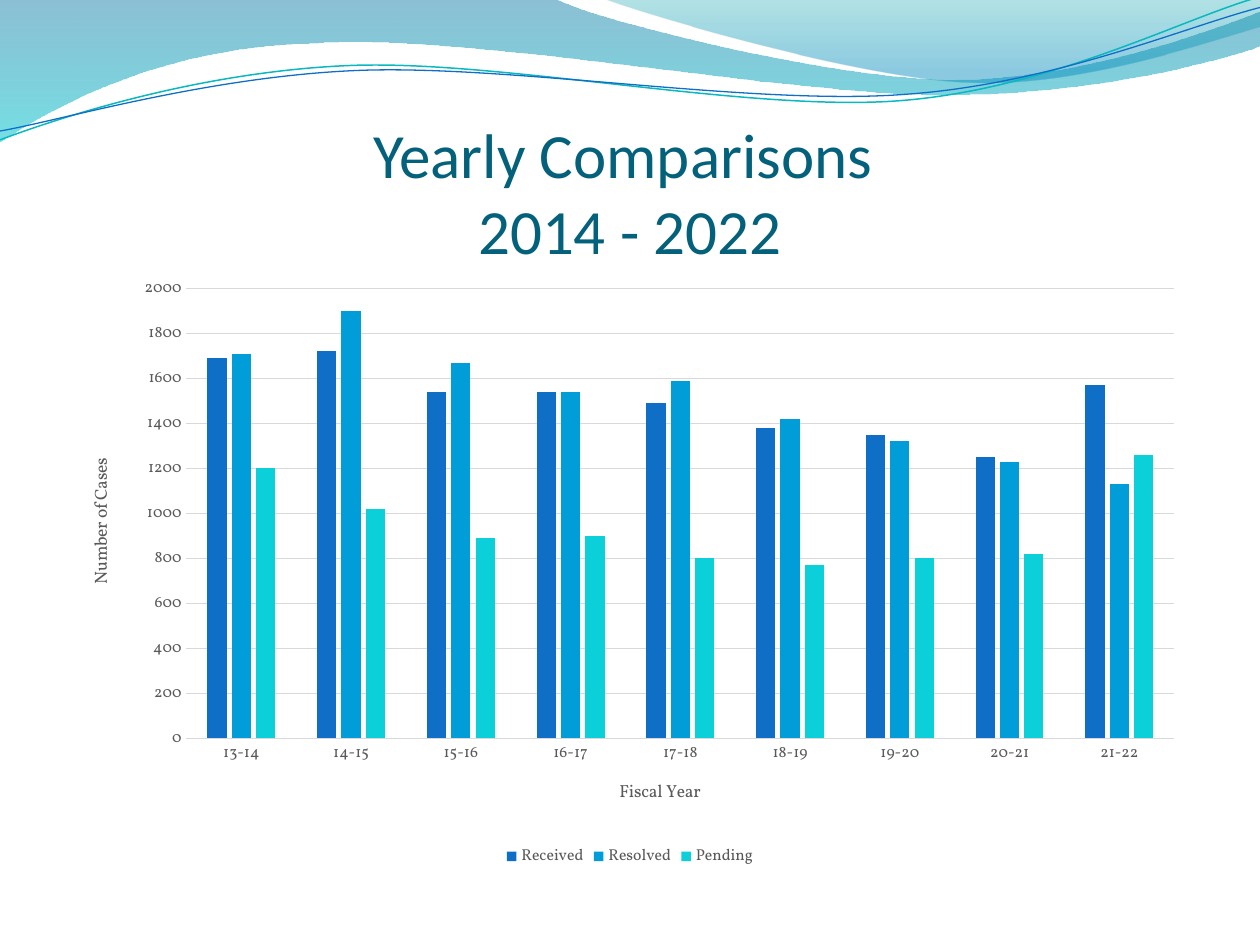
import math

from lxml import etree
from pptx import Presentation
from pptx.chart import data as chart_data
from pptx.dml.color import RGBColor
from pptx.enum import chart as ch, text
from pptx.oxml import parse_xml
from pptx.oxml.ns import nsdecls, qn
from pptx.util import Inches, Pt

TITLE_TEAL = RGBColor(0x04, 0x61, 0x7B)
BLACK = RGBColor(0x00, 0x00, 0x00)
LABEL_GREY = RGBColor(0x59, 0x59, 0x59)
GRID_GREY = RGBColor(0xD9, 0xD9, 0xD9)
BLUE = RGBColor(0x0F, 0x6F, 0xC6)
SKY = RGBColor(0x00, 0x9D, 0xD9)
CYAN = RGBColor(0x0B, 0xD0, 0xD9)
LINE_TEAL = RGBColor(0x0A, 0xB8, 0xBF)
WAVE_BLUE = RGBColor(0x00, 0x74, 0xA1)
WAVE_CYAN = RGBColor(0x00, 0xC6, 0xCF)
CREST_TEAL = RGBColor(0x00, 0xA1, 0xA9)
CREST_BLUE = RGBColor(0x00, 0x8B, 0xBF)
CHART_WIDTH, CHART_HEIGHT = 9, 4.8
TILT = 2.7

prs = Presentation()
prs.slide_width, prs.slide_height = Inches(10), Inches(7.5)
slide = prs.slides.add_slide(prs.slide_layouts[6])


def add_wave(shapes, start, pieces, closed):
    """Draw a line for each 2-number piece and a cubic curve for each 6-number piece."""
    points = [start] + [piece[i:i + 2] for piece in pieces for i in range(0, len(piece), 2)]
    corners = [(Inches(x), Inches(y)) for x, y in points]
    builder = shapes.build_freeform(*corners[0])
    builder.add_line_segments(corners[1:], close=closed)
    wave = builder.convert_to_shape()
    wave.shadow.inherit = False
    segments = iter(list(wave.element.spPr.iter(qn("a:lnTo"))))
    for piece in pieces:
        first = next(segments)
        if len(piece) == 6:
            first.tag = qn("a:cubicBezTo")
            for _ in range(2):
                control = next(segments)
                first.append(control[0])
                control.getparent().remove(control)
    return wave


def place(element, index, x, y, size=None):
    """Fix a chart part at a distance in inches from the chart's corner."""
    for old in element.findall(qn("c:layout")):
        element.remove(old)
    layout = parse_xml(f"<c:layout {nsdecls('c')}><c:manualLayout/></c:layout>")
    settings = [("xMode", "edge"), ("yMode", "edge"),
                ("x", x / CHART_WIDTH), ("y", y / CHART_HEIGHT)]
    if size:
        settings = [("layoutTarget", "inner")] + settings
        settings += [("w", size[0] / CHART_WIDTH), ("h", size[1] / CHART_HEIGHT)]
    for tag, value in settings:
        etree.SubElement(layout[0], qn(f"c:{tag}")).set("val", str(value))
    element.insert(index, layout)


# Filled waves: start, pieces, gradient stops (position, colour, opacity %)
filled_waves = [
    ((0, 0), [(4.4, -0.01), (4.76, 0.17, 6.64, 0.63, 7.58, 0.63),
              (8.53, 0.63, 9.58, 0.26, 10, 0.09), (10.01, 0.36),
              (9.83, 0.44, 8.7, 0.76, 7.46, 0.75), (6.22, 0.75, 3.82, 0.28, 2.57, 0.34),
              (1.29, 0.36, 0.46, 0.83, -0.01, 1.13), (0, 0)],
     [(0, WAVE_BLUE, 45), (1, WAVE_CYAN, 55)]),
    ((4.79, -0.01), [(5.09, 0.11, 6.82, 0.62, 7.69, 0.65),
                     (8.56, 0.69, 9.61, 0.32, 10, 0.21), (10, 0), (4.79, -0.01)],
     [(0, CREST_TEAL, 30), (0.8, CREST_BLUE, 45)]),
]
for start, pieces, stops in filled_waves:
    wave = add_wave(slide.shapes, start, pieces, True)
    wave.line.fill.background()
    wave.fill.gradient()
    wave.fill.gradient_angle = 270
    for stop, (position, colour, _) in zip(wave.fill.gradient_stops, stops):
        stop.position = position
        stop.color.rgb = colour
    for rgb, (_, _, opacity) in zip(wave.element.spPr.iter(qn("a:srgbClr")), stops):
        etree.SubElement(rgb, qn("a:alpha")).set("val", str(opacity * 1000))

# Wave lines, levelled about their middle and then tilted as shapes
wave_lines = [
    ((0, 1.11), [(0.48, 0.93, 1.58, 0.57, 2.77, 0.52), (3.95, 0.47, 5.93, 0.89, 7.13, 0.8),
                 (8.33, 0.71, 9.38, 0.15, 9.98, -0.02)], (4.99, 0.58), LINE_TEAL, 0.85),
    ((0, 1.04), [(0.47, 0.96, 1.64, 0.61, 2.83, 0.56), (4.03, 0.51, 5.97, 0.84, 7.17, 0.75),
                 (8.36, 0.67, 9.41, 0.21, 10, 0.06)], (5, 0.59), BLUE, 0.75),
]
line_group = slide.shapes.add_group_shape()
cos, sin = math.cos(math.radians(TILT)), math.sin(math.radians(TILT))
for start, pieces, (mid_x, mid_y), colour, width in wave_lines:
    level = []
    for piece in [start] + pieces:
        offsets = [(x - mid_x, y - mid_y) for x, y in zip(piece[::2], piece[1::2])]
        level.append(tuple(value for dx, dy in offsets
                           for value in (mid_x + dx * cos - dy * sin,
                                         mid_y + dx * sin + dy * cos)))
    wave = add_wave(line_group.shapes, level[0], level[1:], False)
    wave.rotation = 360 - TILT
    wave.fill.background()
    wave.line.color.rgb = colour
    wave.line.width = Pt(width)

# Heading
heading = slide.shapes.add_textbox(Inches(0.5), Inches(0.77), Inches(9), Inches(1.35)).text_frame
heading.word_wrap = True
heading.vertical_anchor = text.MSO_ANCHOR.BOTTOM
heading.margin_left = heading.margin_right = heading.margin_bottom = 0
heading.margin_top = Inches(0.05)
heading_lines = heading.paragraphs[0]
heading_lines.alignment = text.PP_ALIGN.CENTER
for number, words in enumerate(("Yearly Comparisons ", "2014 - 2022")):
    if number:
        heading_lines.add_line_break()
    run = heading_lines.add_run()
    run.text = words
    run.font.name, run.font.size = "Calibri", Pt(36)
    run.font.color.rgb = TITLE_TEAL

# Case counts by fiscal year
cases = chart_data.CategoryChartData()
cases.categories = [f"{year}-{year + 1}" for year in range(13, 22)]
case_series = [
    ("Received", BLUE, (1690, 1720, 1540, 1540, 1490, 1380, 1350, 1250, 1570)),
    ("Resolved", SKY, (1710, 1900, 1670, 1540, 1590, 1420, 1320, 1230, 1130)),
    ("Pending", CYAN, (1200, 1020, 890, 900, 800, 770, 800, 820, 1260)),
]
for name, _, counts in case_series:
    cases.add_series(name, counts)
chart = slide.shapes.add_chart(ch.XL_CHART_TYPE.COLUMN_CLUSTERED, Inches(0.5), Inches(2.12),
                               Inches(CHART_WIDTH), Inches(CHART_HEIGHT), cases).chart
chart.has_title = False
chart.has_legend = True
chart.legend.position = ch.XL_LEGEND_POSITION.BOTTOM
chart.legend.include_in_layout = False
bars = chart.plots[0]
bars.vary_by_categories = False
bars.gap_width, bars.overlap = 219, -27
for series, (_, colour, _) in zip(bars.series, case_series):
    series.format.fill.solid()
    series.format.fill.fore_color.rgb = colour
place(chart.element.chart.plotArea, 0, 0.98, 0.17, (7.84, 3.57))

# Axes and their titles
years, counts = chart.category_axis, chart.value_axis
fonts = [(chart.font, 10, BLACK)]
fonts += [(part.font, 9, LABEL_GREY)
          for part in (years.tick_labels, counts.tick_labels, chart.legend)]
for axis, words, x, y in ((years, "Fiscal Year", 4.39, 4.04),
                          (counts, "Number of Cases", 0.18, 1.49)):
    axis.major_tick_mark = axis.minor_tick_mark = ch.XL_TICK_MARK.NONE
    run = axis.axis_title.text_frame.paragraphs[0].add_run()
    run.text = words
    run.font.bold = False
    fonts.append((run.font, 10, LABEL_GREY))
    place(axis.axis_title._element, 1, x, y)
for font, size, colour in fonts:
    font.name, font.size = "Vollkorn", Pt(size)
    font.color.rgb = colour
turned = counts.axis_title._element.find(".//" + qn("a:bodyPr"))
turned.set("rot", "-5400000")
turned.set("vert", "horz")
counts.minimum_scale, counts.maximum_scale, counts.major_unit = 0, 2000, 200
counts.format.line.fill.background()
for rule in (years.format.line, counts.major_gridlines.format.line):
    rule.color.rgb = GRID_GREY
    rule.width = Pt(0.75)

prs.save("out.pptx")
